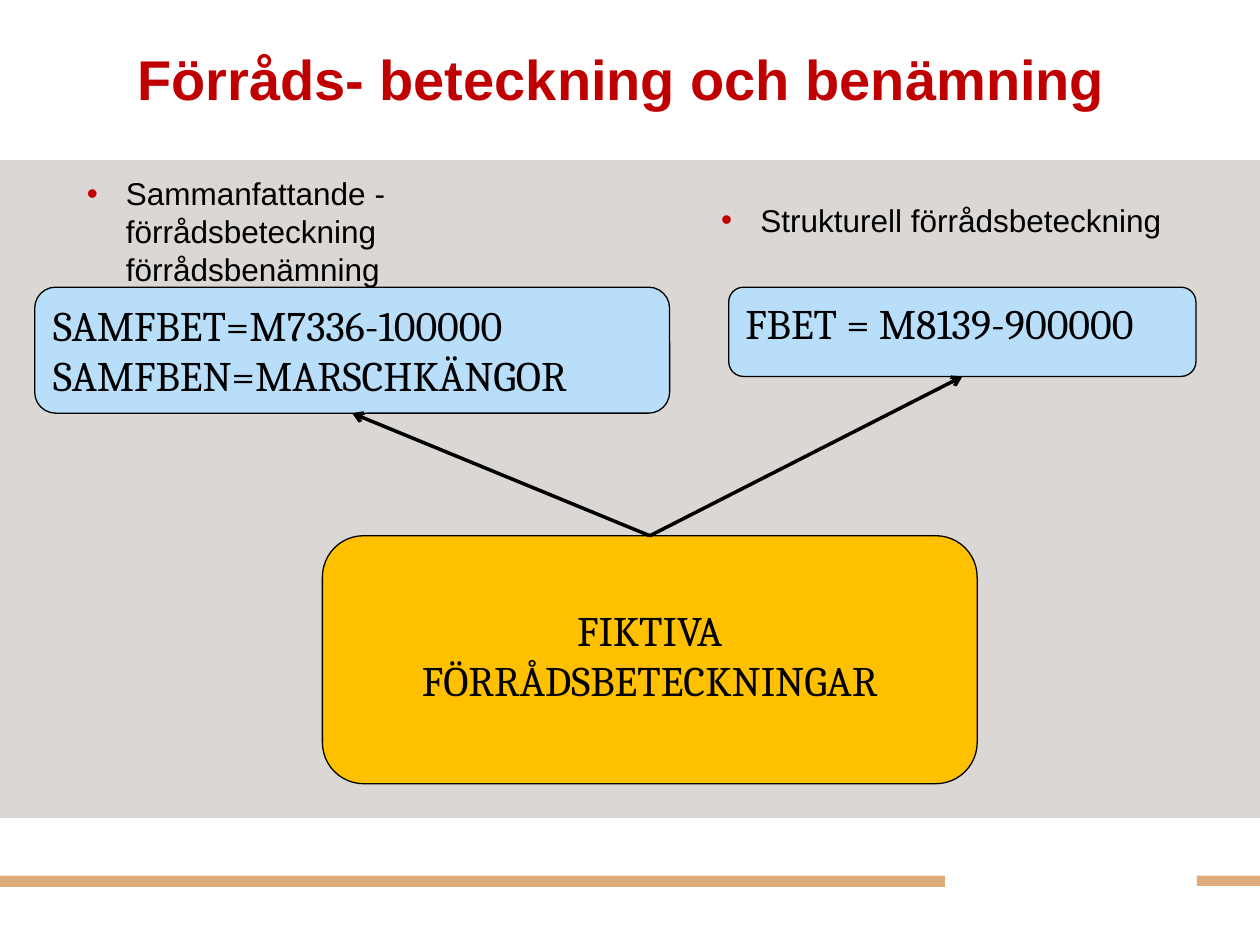
from lxml.etree import SubElement
from pptx import Presentation
from pptx.dml.color import RGBColor
from pptx.enum.shapes import MSO_CONNECTOR, MSO_SHAPE
from pptx.enum.text import MSO_ANCHOR, PP_ALIGN
from pptx.oxml.ns import qn
from pptx.util import Cm, Pt

BLACK, RED, BLUE, AMBER = "000000", "C00000", "B8DEFA", "FFC000"
GREY, SAND = "DAD7D4", "DDAC7A"


def paint(color_format, color):
    color_format.rgb = RGBColor.from_string(color)


def write(box, lines, font="Cambria", size=24, color=BLACK, bold=False,
          align=PP_ALIGN.LEFT, anchor=MSO_ANCHOR.TOP, bottom=0.13,
          spacing=None, bullet=None):
    frame = box.text_frame
    frame.word_wrap = True
    frame.vertical_anchor = anchor
    frame.margin_bottom = Cm(bottom)
    for index, line in enumerate(lines):
        para = frame.add_paragraph() if index else frame.paragraphs[0]
        para.text = line
        para.alignment = align
        para.line_spacing = spacing
        if bullet:
            properties = para._p.get_or_add_pPr()
            properties.set("marL", str(Cm(0.79)))
            properties.set("indent", str(-Cm(0.79)))
            bullet_color = SubElement(properties, qn("a:buClr"))
            SubElement(bullet_color, qn("a:srgbClr"), val=bullet)
            SubElement(properties, qn("a:buFont"), typeface="Arial")
            SubElement(properties, qn("a:buChar"), char="•")
        for span in para.runs:
            span.font.name = font
            span.font.size = Pt(size)
            span.font.bold = bold
            paint(span.font.color, color)


deck = Presentation()
deck.slide_width, deck.slide_height = Cm(25.4), Cm(19.05)
page = deck.slides.add_slide(deck.slide_layouts[6])

# Background panel, footer bars and rounded boxes
shapes = {}
for name, kind, left, top, width, height, fill, outlined in (
    ("panel", MSO_SHAPE.RECTANGLE, 0, 3.23, 25.4, 13.26, GREY, False),
    ("long bar", MSO_SHAPE.RECTANGLE, 0, 17.65, 19.05, 0.23, SAND, False),
    ("short bar", MSO_SHAPE.RECTANGLE, 24.13, 17.65, 1.27, 0.21, SAND, False),
    ("summary", MSO_SHAPE.ROUNDED_RECTANGLE, 0.7, 5.79, 12.8, 2.54, BLUE, True),
    ("structural", MSO_SHAPE.ROUNDED_RECTANGLE, 14.69, 5.79, 9.42, 1.8, BLUE, True),
    ("fictive", MSO_SHAPE.ROUNDED_RECTANGLE, 6.5, 10.8, 13.2, 5, AMBER, True),
):
    box = page.shapes.add_shape(kind, Cm(left), Cm(top), Cm(width), Cm(height))
    box.shadow.inherit = False
    box.fill.solid()
    paint(box.fill.fore_color, fill)
    if outlined:
        paint(box.line.color, BLACK)
        box.line.width = Pt(0.75)
    else:
        box.line.fill.background()
    shapes[name] = box

write(shapes["summary"], ["SAMFBET=M7336-100000\vSAMFBEN=MARSCHKÄNGOR"])
write(shapes["structural"], ["FBET = M8139-900000"])
write(shapes["fictive"], ["FIKTIVA", "FÖRRÅDSBETECKNINGAR"],
      align=PP_ALIGN.CENTER, anchor=MSO_ANCHOR.MIDDLE, bottom=0.33)

# Arrows from the top of the fictive box to the bottom of each blue box
for target in ("summary", "structural"):
    arrow = page.shapes.add_connector(MSO_CONNECTOR.STRAIGHT, 0, 0, 0, 0)
    arrow.begin_connect(shapes["fictive"], 0)
    arrow.end_connect(shapes[target], 2)
    paint(arrow.line.color, BLACK)
    arrow.line.width = Pt(2)
    SubElement(arrow.line._get_or_add_ln(), qn("a:tailEnd"), type="arrow")
    SubElement(arrow._element.spPr, qn("a:effectLst"))

# Title
title = page.shapes.add_textbox(Cm(0.78), Cm(0.93), Cm(23.5), Cm(3.35))
write(title, ["Förråds- beteckning och benämning"], font="Arial", size=32,
      color=RED, bold=True, align=PP_ALIGN.CENTER, spacing=0.9)

# Bulleted captions above the blue boxes
for text, left, top, width, height in (
    ("Sammanfattande - förrådsbeteckning\vförrådsbenämning", 1.5, 3.39, 9.19, 2.82),
    ("Strukturell förrådsbeteckning", 14.29, 3.92, 9.42, 1.02),
):
    caption = page.shapes.add_textbox(Cm(left), Cm(top), Cm(width), Cm(height))
    write(caption, [text], font="Arial", size=18, bullet=RED)

deck.save("out.pptx")
